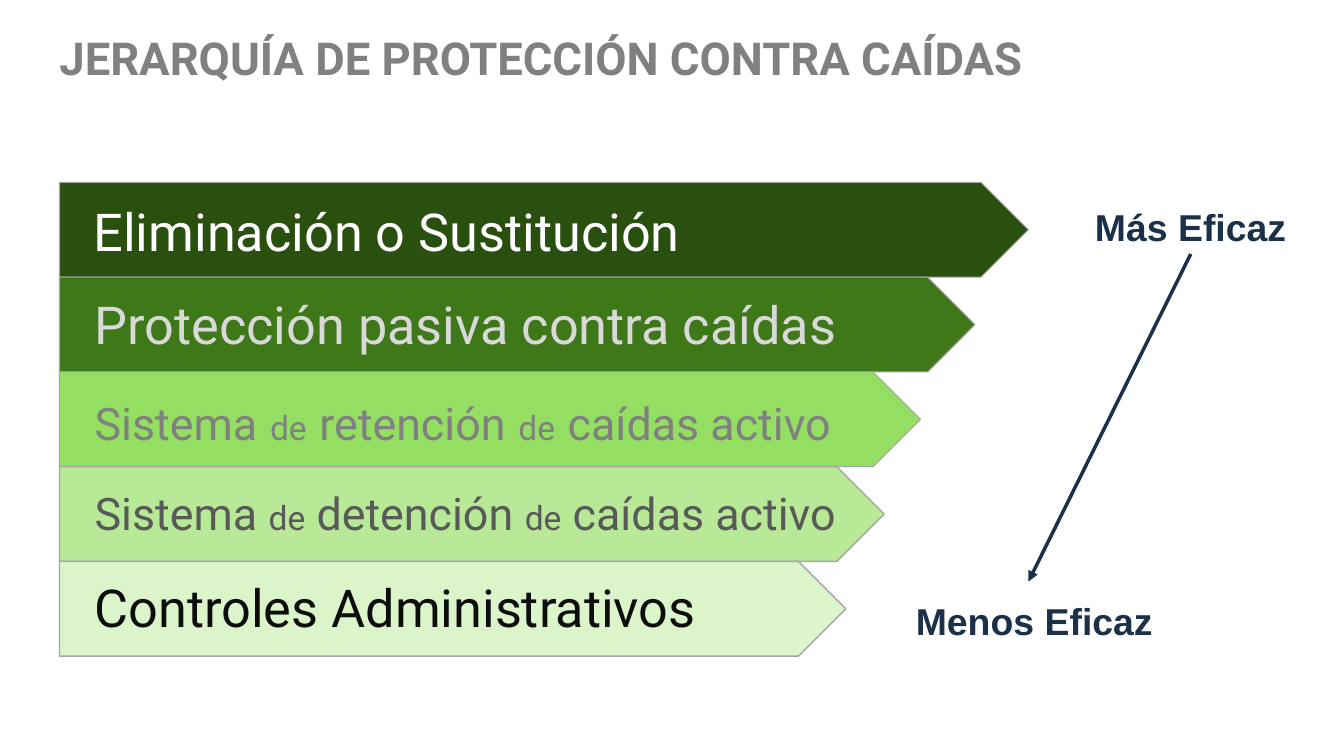
"""Build the fall protection hierarchy slide."""
import pptx
import pptx.dml.color
import pptx.enum.shapes
import pptx.enum.text
import pptx.oxml
import pptx.oxml.ns
import pptx.util
from pptx.util import Inches

ANCHOR = pptx.enum.text.MSO_ANCHOR
ALIGN = pptx.enum.text.PP_ALIGN


def rgb(value):
    """Return the colour for a hex string."""
    return pptx.dml.color.RGBColor.from_string(value)


class Deck:
    """Hold the style and the current slide."""

    navy, border = "1B3049", "A6A6A6"

    def __init__(self):
        """Start a widescreen deck with one blank slide."""
        self.prs = pptx.Presentation()
        self.prs.slide_width = Inches(13.33)
        self.prs.slide_height = Inches(7.5)
        self.s = self.prs.slides.add_slide(self.prs.slide_layouts[6])

    def arrow_bar(self, x, y, w, h, fill, weight):
        """Add a pentagon bar pointing right."""
        sp = self.s.shapes.add_shape(
            pptx.enum.shapes.MSO_SHAPE.PENTAGON, Inches(x), Inches(y), Inches(w), Inches(h))
        sp.shadow.inherit = False
        sp.fill.solid()
        sp.fill.fore_color.rgb = rgb(fill)
        sp.line.color.rgb = rgb(self.border)
        sp.line.width = pptx.util.Pt(weight)

    def text(self, x, y, w, h, runs, color, font="Roboto", bold=False,
             align=ALIGN.LEFT, anchor=ANCHOR.TOP, margins=(0.1, 0.05)):
        """Add a one-paragraph text box from (text, size) runs."""
        tb = self.s.shapes.add_textbox(Inches(x), Inches(y), Inches(w), Inches(h))
        tf = tb.text_frame
        tf.word_wrap = True
        tf.vertical_anchor = anchor
        tf.margin_left = tf.margin_right = Inches(margins[0])
        tf.margin_top = tf.margin_bottom = Inches(margins[1])
        p = tf.paragraphs[0]
        p.alignment = align
        p.font.name = font
        p.font.bold = bold
        p.font.color.rgb = rgb(color)
        sizes = {size for _, size in runs}
        if len(sizes) == 1:
            p.font.size = pptx.util.Pt(sizes.pop())
        for content, size in runs:
            r = p.add_run()
            r.text = content
            if sizes:
                r.font.size = pptx.util.Pt(size)
        return tb

    def label(self, x, y, w, h, content):
        """Add a bold centred label for one end of the scale."""
        return self.text(x, y, w, h, [(content, 26.7)], self.navy, "Arial", True,
                         ALIGN.CENTER, ANCHOR.MIDDLE)

    def arrow(self, start, x, y):
        """Add an arrow from the bottom of a box to a point."""
        cx = self.s.shapes.add_connector(
            pptx.enum.shapes.MSO_CONNECTOR.STRAIGHT, 0, 0, Inches(x), Inches(y))
        cx.begin_connect(start, 2)
        cx.line.color.rgb = rgb(self.navy)
        cx.line.width = pptx.util.Pt(2.5)
        ns = pptx.oxml.ns.nsdecls("a")
        cx.line._get_or_add_ln().append(
            pptx.oxml.parse_xml(f'<a:tailEnd {ns} type="triangle"/>'))
        cx._element.spPr.append(pptx.oxml.parse_xml(f"<a:effectLst {ns}/>"))


def main():
    """Draw the slide and save it."""
    deck = Deck()
    deck.text(0.59, 0.22, 10.2, 0.99, [("JERARQUÍA DE PROTECCIÓN CONTRA CAÍDAS", 32.4)],
              "808080", bold=True, margins=(0, 0.08))

    gap = (" ", 36)
    retention = [("Sistema", 32), gap, ("de", 24), gap, ("retención", 32), gap,
                 ("de", 24), gap, ("caídas activo", 32)]
    arrest = [("Sistema ", 32), ("de", 24), (" detención ", 32),
              ("de", 24), (" caídas activo", 32)]
    levels = [
        (9.61, "2A5010", 0.75, [("Eliminación o Sustitución", 37.3)], "FFFFFF", 0.83, 1.93),
        (9.08, "3F7819", 0.75, [("Protección pasiva contra caídas", 37.3)], "D9D9D9", 0.84, 2.85),
        (8.54, "94DE61", 0.75, retention, "808080", 0.84, 3.82),
        (8.18, "B7E996", 1, arrest, "595959", 0.84, 4.77),
        (7.8, "DBF4CA", 1, [("Controles Administrativos", 37.3)], "0D0D0D", 0.84, 5.66),
    ]
    height = 0.94
    for i, (width, fill, weight, runs, color, x, y) in enumerate(levels):
        deck.arrow_bar(0.59, 1.81 + i * height, width, height, fill, weight)
        deck.text(x, y, 7.66, 0.73, runs, color)

    most = deck.label(10.37, 1.98, 2.88, 0.54, "Más Eficaz")
    deck.label(8.45, 5.89, 3.62, 0.54, "Menos Eficaz")
    deck.arrow(most, 10.2, 5.77)
    deck.prs.save("out.pptx")


if __name__ == "__main__":
    main()
